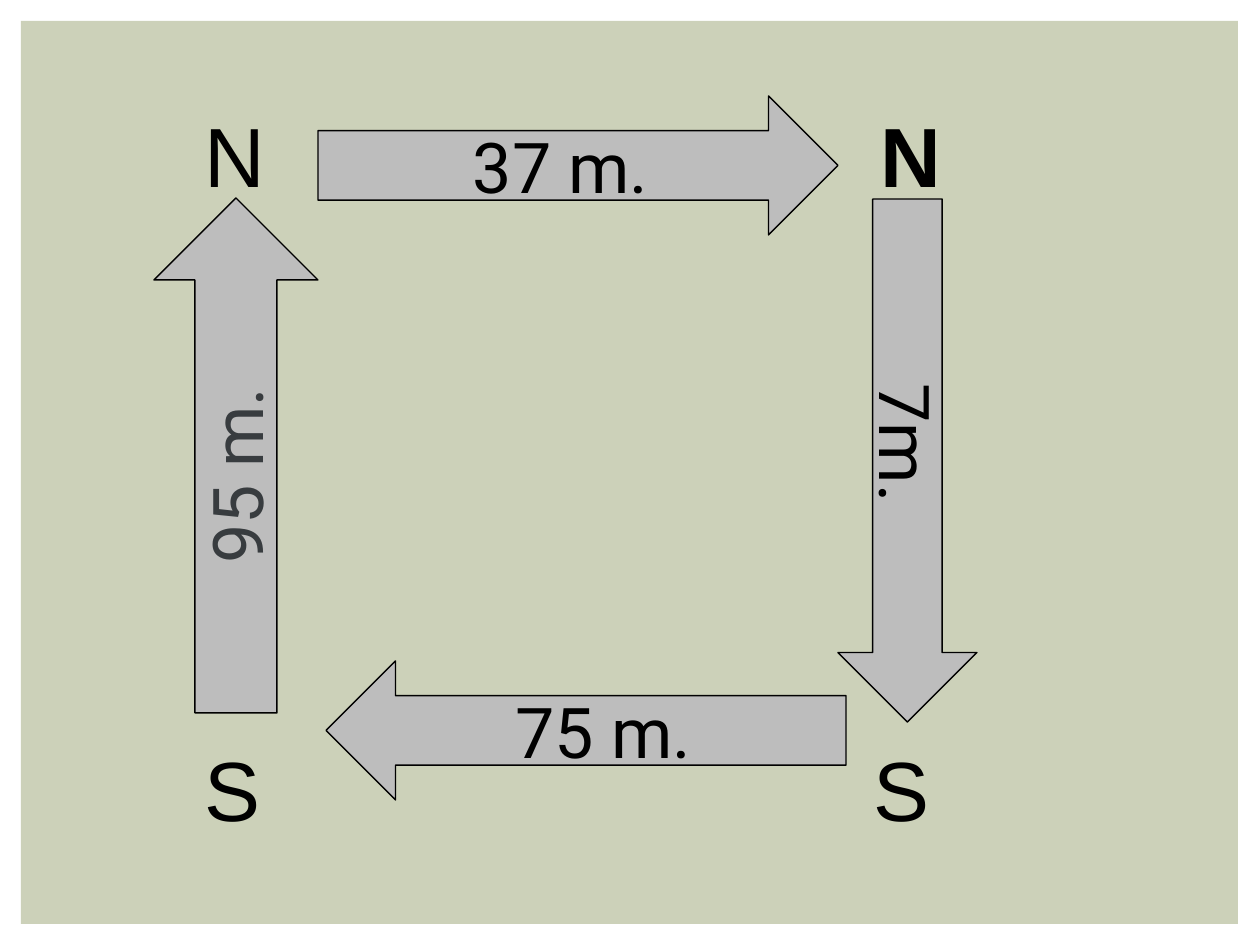
"""Build a slide with four distance arrows running between N and S labels."""
from pptx import Presentation
from pptx.dml.color import RGBColor
from pptx.enum.shapes import MSO_SHAPE
from pptx.enum.text import MSO_ANCHOR, MSO_AUTO_SIZE, PP_ALIGN
from pptx.util import Emu, Pt

RECTANGLE = MSO_SHAPE.RECTANGLE
UP, RIGHT = MSO_SHAPE.UP_ARROW, MSO_SHAPE.RIGHT_ARROW
DOWN, LEFT = MSO_SHAPE.DOWN_ARROW, MSO_SHAPE.LEFT_ARROW
MIDDLE = MSO_ANCHOR.MIDDLE
CENTER = PP_ALIGN.CENTER
FIT_SHAPE = MSO_AUTO_SIZE.SHAPE_TO_FIT_TEXT

PX_PER_INCH = 126
COLORS = {"panel": "CCD1B9", "arrow": "BDBDBD", "ink": "000000", "slate": "383C3F"}

ARROWS = [
    (UP, (154, 198, 164, 515), "95 m.", "slate", "vert270"),
    (RIGHT, (318, 96, 520, 139), "37 m.", "ink", "horz"),
    (DOWN, (838, 199, 139, 523), "7m.", "ink", "vert"),
    (LEFT, (326, 661, 520, 139), "75 m.", "ink", "horz"),
]
LABELS = [
    ("S", (192, 731, 89, 115), False),
    ("N", (192, 97, 89, 115), False),
    ("N", (868, 97, 139, 115), True),
    ("S", (861, 731, 92, 115), False),
]


def px(length):
    return Emu(round(length * 914400 / PX_PER_INCH))


def color(name):
    return RGBColor.from_string(COLORS[name])


def set_text(frame, text, font, size, ink, bold=False):
    frame.text = text
    span = frame.paragraphs[0].runs[0]
    span.font.name = font
    span.font.size = Pt(size)
    span.font.bold = bold
    span.font.color.rgb = color(ink)


def add_filled(page, kind, bounds, fill):
    shape = page.shapes.add_shape(kind, *map(px, bounds))
    shape.shadow.inherit = False
    shape.fill.solid()
    shape.fill.fore_color.rgb = color(fill)
    return shape


def add_panel(page):
    panel = add_filled(page, RECTANGLE, (21, 21, 1217, 903), "panel")
    panel.line.fill.background()


def add_arrow(page, kind, bounds, distance, ink, direction):
    arrow = add_filled(page, kind, bounds, "arrow")
    arrow.line.color.rgb = color("ink")
    arrow.line.width = Pt(0.79)
    frame = arrow.text_frame
    set_text(frame, distance, "Roboto", 40, ink)
    frame.vertical_anchor = MIDDLE
    frame.paragraphs[0].alignment = CENTER
    frame._txBody.bodyPr.set("vert", direction)


def add_label(page, letter, bounds, bold):
    box = page.shapes.add_textbox(*map(px, bounds))
    frame = box.text_frame
    frame.word_wrap = True
    frame.auto_size = FIT_SHAPE
    set_text(frame, letter, "Arial", 48, "ink", bold)


def main():
    deck = Presentation()
    deck.slide_width, deck.slide_height = px(1260), px(945)
    page = deck.slides.add_slide(deck.slide_layouts[6])
    add_panel(page)
    for arrow in ARROWS:
        add_arrow(page, *arrow)
    for label in LABELS:
        add_label(page, *label)
    deck.save("out.pptx")


if __name__ == "__main__":
    main()
